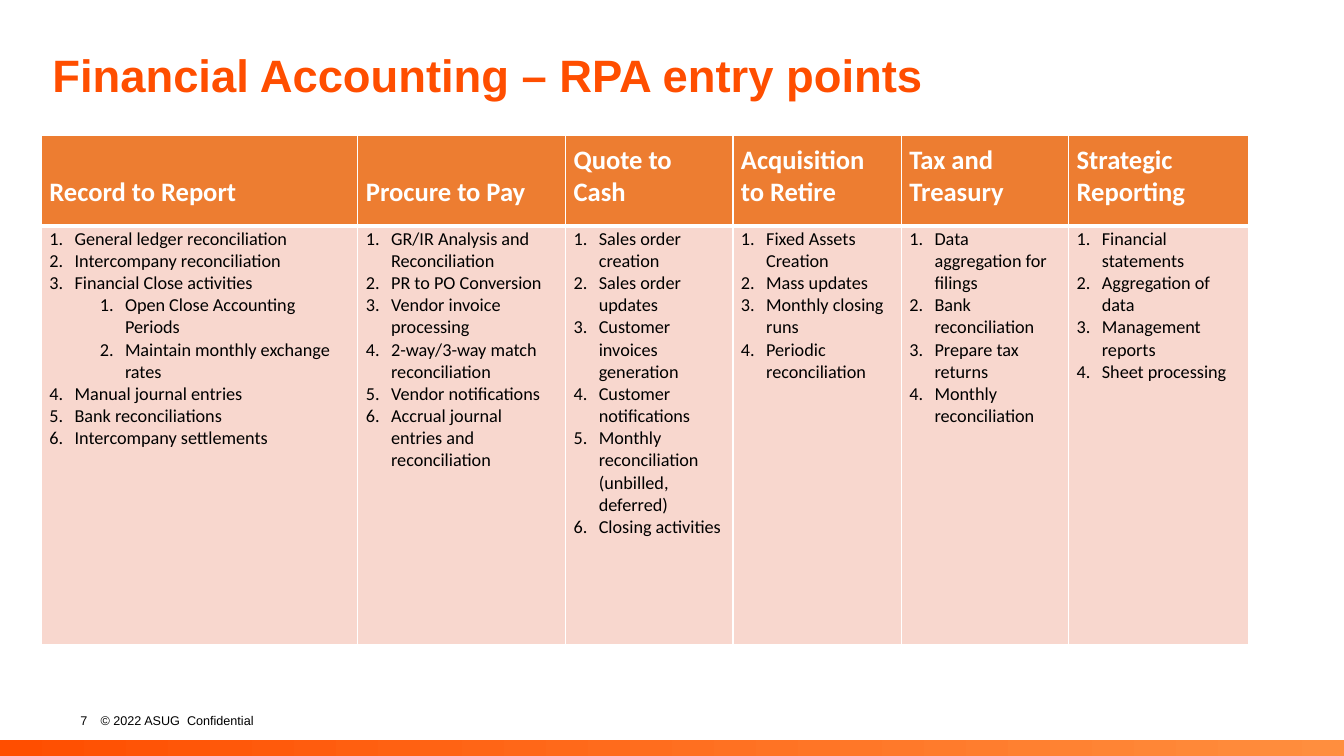
from dataclasses import dataclass

from lxml.etree import SubElement
from pptx import Presentation
from pptx.dml.color import RGBColor
from pptx.enum.shapes import MSO_SHAPE
from pptx.enum.text import MSO_ANCHOR
from pptx.oxml.ns import qn
from pptx.util import Inches, Pt


@dataclass(frozen=True)
class Theme:
    accent: str = "FF4E00"
    accent_light: str = "FF8E3E"
    header_fill: str = "ED7D31"
    body_fill: str = "F8D7CE"
    white: str = "FFFFFF"
    black: str = "000000"
    title_font: str = "Arial"
    table_font: str = "Calibri"
    title_size: float = 32.4
    header_size: float = 19
    body_size: float = 13
    footer_size: float = 9


THEME = Theme()

# Heading, column width, and numbered items; a nested list is one level deeper
COLUMNS = [
    ("Record to Report", 3.14, [
        "General ledger reconciliation", "Intercompany reconciliation",
        "Financial Close activities",
        ["Open Close Accounting Periods", "Maintain monthly exchange rates"],
        "Manual journal entries", "Bank reconciliations",
        "Intercompany settlements"]),
    ("Procure to Pay", 2.06, [
        "GR/IR Analysis and Reconciliation", "PR to PO Conversion",
        "Vendor invoice processing", "2-way/3-way match reconciliation",
        "Vendor notifications", "Accrual journal entries and reconciliation"]),
    ("Quote to Cash", 1.66, [
        "Sales order creation", "Sales order updates",
        "Customer invoices generation", "Customer notifications",
        "Monthly reconciliation (unbilled, deferred)", "Closing activities"]),
    ("Acquisition to Retire", 1.67, [
        "Fixed Assets Creation", "Mass updates", "Monthly closing runs",
        "Periodic reconciliation"]),
    ("Tax and Treasury", 1.66, [
        "Data aggregation for filings", "Bank reconciliation",
        "Prepare tax returns", "Monthly reconciliation"]),
    ("Strategic Reporting", 1.78, [
        "Financial statements", "Aggregation of data", "Management reports",
        "Sheet processing"]),
]
ROW_HEIGHTS = (0.9, 4.15)


def set_font(p, name, size, color, bold=False):
    p.font.name = name
    p.font.size = Pt(size)
    p.font.bold = bold
    p.font.color.rgb = RGBColor.from_string(color)


def add_text(s, text, left, top, width, height, margin=0.0):
    tf = s.shapes.add_textbox(Inches(left), Inches(top),
                              Inches(width), Inches(height)).text_frame
    tf.word_wrap = True
    tf.margin_left = tf.margin_right = Inches(margin)
    tf.margin_top = tf.margin_bottom = Inches(margin / 2)
    p = tf.paragraphs[0]
    p.text = text
    return p


def add_tab_stop(p, position):
    tabs = SubElement(p._p.get_or_add_pPr(), qn("a:tabLst"))
    SubElement(tabs, qn("a:tab"), pos=str(Inches(position)), algn="l")


def add_footer_bar(s):
    sp = s.shapes.add_shape(MSO_SHAPE.RECTANGLE, 0, Inches(7.34),
                            Inches(13.33), Inches(0.16))
    sp.shadow.inherit = False
    sp.line.fill.background()
    sp.fill.gradient()
    sp.fill.gradient_angle = 0
    for stop, color in zip(sp.fill.gradient_stops,
                           (THEME.accent, THEME.accent_light)):
        stop.color.rgb = RGBColor.from_string(color)


def set_borders(cell, **widths):
    tc_pr = cell._tc.get_or_add_tcPr()
    for side in "LRTB":
        ln = SubElement(tc_pr, qn(f"a:ln{side}"), w=str(Pt(widths.get(side, 1))))
        fill = SubElement(ln, qn("a:solidFill"))
        SubElement(fill, qn("a:srgbClr"), val=THEME.white)


def style_cell(cell, fill, **border_widths):
    set_borders(cell, **border_widths)
    cell.fill.solid()
    cell.fill.fore_color.rgb = RGBColor.from_string(fill)
    cell.margin_left, cell.margin_right = Inches(0.08), Inches(0.11)
    cell.margin_top, cell.margin_bottom = Inches(0.02), Inches(0.17)


def fill_header(cell, heading):
    style_cell(cell, THEME.header_fill, B=3)
    cell.vertical_anchor = MSO_ANCHOR.BOTTOM
    p = cell.text_frame.paragraphs[0]
    p.text = heading
    set_font(p, THEME.table_font, THEME.header_size, THEME.white, bold=True)


def number_levels(items, level=0):
    for item in items:
        if isinstance(item, list):
            yield from number_levels(item, level + 1)
        else:
            yield item, level


def fill_list(cell, items):
    style_cell(cell, THEME.body_fill, T=3)
    tf = cell.text_frame
    for i, (text, level) in enumerate(number_levels(items)):
        p = tf.add_paragraph() if i else tf.paragraphs[0]
        p.text = text
        p.level = level
        p_pr = p._p.get_or_add_pPr()
        p_pr.set("marL", str(Inches(0.25 + 0.5 * level)))
        p_pr.set("indent", str(Inches(-0.25)))
        SubElement(p_pr, qn("a:buFont"), typeface="+mj-lt")
        SubElement(p_pr, qn("a:buAutoNum"), type="arabicPeriod")
        set_font(p, THEME.table_font, THEME.body_size, THEME.black)


def add_process_table(s):
    total_width = sum(width for _, width, _ in COLUMNS)
    table = s.shapes.add_table(len(ROW_HEIGHTS), len(COLUMNS),
                               Inches(0.41), Inches(1.34), Inches(total_width),
                               Inches(sum(ROW_HEIGHTS))).table
    for row, height in zip(table.rows, ROW_HEIGHTS):
        row.height = Inches(height)
    for i, (heading, width, items) in enumerate(COLUMNS):
        table.columns[i].width = Inches(width)
        fill_header(table.cell(0, i), heading)
        fill_list(table.cell(1, i), items)


def main():
    prs = Presentation()
    prs.slide_width, prs.slide_height = Inches(13.33), Inches(7.5)
    s = prs.slides.add_slide(prs.slide_layouts[6])

    # Footer
    add_footer_bar(s)
    p = add_text(s, "7\t© 2022 ASUG  Confidential", 0.7, 7.02, 2.86, 0.25, 0.1)
    add_tab_stop(p, 0.2)
    set_font(p, THEME.title_font, THEME.footer_size, THEME.black)

    # Title
    p = add_text(s, "Financial Accounting – RPA entry points",
                 0.52, 0.53, 12.32, 0.64)
    p.line_spacing = 0.9
    set_font(p, THEME.title_font, THEME.title_size, THEME.accent, bold=True)

    # Entry points by process
    add_process_table(s)

    prs.save("out.pptx")


if __name__ == "__main__":
    main()
